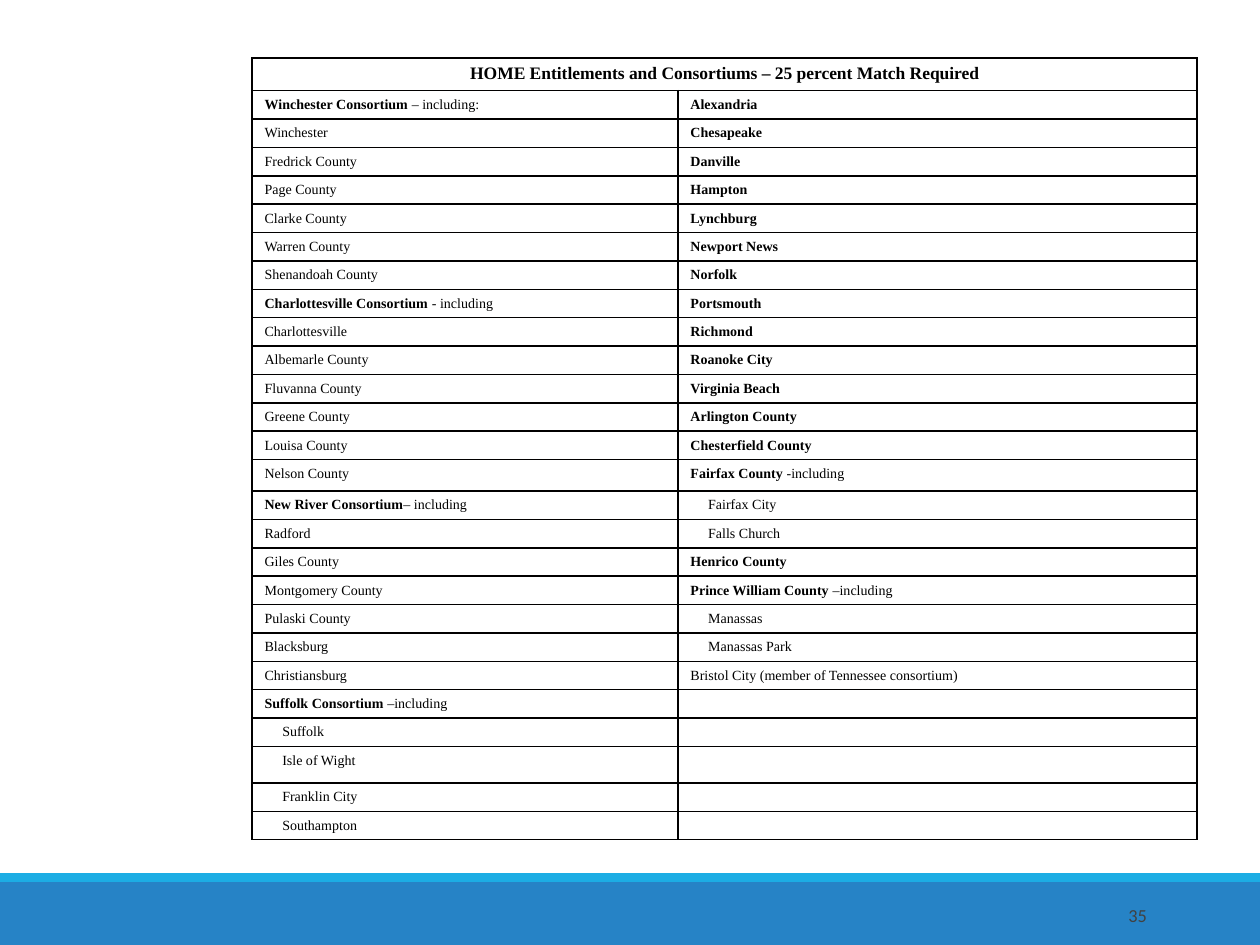
from itertools import zip_longest

from lxml.etree import SubElement
from pptx import Presentation
from pptx.dml.color import RGBColor
from pptx.enum.shapes import MSO_SHAPE as Shape
from pptx.enum.text import MSO_ANCHOR as Anchor, PP_ALIGN as Align
from pptx.oxml.ns import qn
from pptx.util import Inches, Pt

COLORS = {
    "band": "2683C6",
    "stripe": "1CADE4",
    "number": "414141",
    "text": "000000",
    "border": "010000",
    "cell": "FFFFFF",
}
TITLE = "HOME Entitlements and Consortiums – 25 percent Match Required"
CONSORTIUMS = [
    "*Winchester Consortium* – including:", "Winchester", "Fredrick County",
    "Page County", "Clarke County", "Warren County", "Shenandoah County",
    "*Charlottesville Consortium* - including", "Charlottesville",
    "Albemarle County", "Fluvanna County", "Greene County", "Louisa County",
    "Nelson County", "*New River Consortium*– including", "Radford",
    "Giles County", "Montgomery County", "Pulaski County", "Blacksburg",
    "Christiansburg", "*Suffolk Consortium* –including", ">Suffolk",
    ">Isle of Wight", ">Franklin City", ">Southampton",
]
ENTITLEMENTS = [
    "*Alexandria", "*Chesapeake", "*Danville", "*Hampton", "*Lynchburg",
    "*Newport News", "*Norfolk", "*Portsmouth", "*Richmond", "*Roanoke City",
    "*Virginia Beach", "*Arlington County", "*Chesterfield County",
    "*Fairfax County *-including", ">Fairfax City", ">Falls Church",
    "*Henrico County", "*Prince William County *–including", ">Manassas",
    ">Manassas Park", "Bristol City (member of Tennessee consortium)",
]
TABLE_HEIGHT = 6.21
TALL_ROWS = {0: 0.26, 14: 0.25, 24: 0.29}


def write(frame, text, size=8, font="Times New Roman", color="text", align=Align.LEFT):
    paragraph = frame.paragraphs[0]
    paragraph.alignment = align
    if text.startswith(">"):
        paragraph._p.get_or_add_pPr().set("marL", str(Inches(0.14)))
    for index, part in enumerate(text.lstrip(">").split("*")):
        if part:
            run = paragraph.add_run()
            run.text = part
            run.font.size = Pt(size)
            run.font.name = font
            run.font.bold = index % 2 == 1
            run.font.color.rgb = RGBColor.from_string(COLORS[color])
    if not text:
        SubElement(paragraph._p, qn("a:endParaRPr"), sz=str(size * 100))


def add_borders(cell):
    properties = cell._tc.get_or_add_tcPr()
    for index, side in enumerate(("lnL", "lnR", "lnT", "lnB")):
        line = SubElement(properties, qn(f"a:{side}"), w=str(Pt(1)))
        fill = SubElement(line, qn("a:solidFill"))
        SubElement(fill, qn("a:srgbClr"), val=COLORS["border"])
        properties.insert(index, line)


prs = Presentation()
prs.slide_width, prs.slide_height = Inches(10), Inches(7.5)
slide = prs.slides.add_slide(prs.slide_layouts[6])

for top, height, color in ((7, 0.5, "band"), (6.93, 0.07, "stripe")):
    footer = slide.shapes.add_shape(
        Shape.RECTANGLE, 0, Inches(top), Inches(10), Inches(height))
    footer.shadow.inherit = False
    footer.fill.solid()
    footer.fill.fore_color.rgb = RGBColor.from_string(COLORS[color])
    footer.line.fill.background()

page_number = slide.shapes.add_textbox(
    Inches(8.12), Inches(7.06), Inches(1.08), Inches(0.4)).text_frame
page_number.word_wrap = True
page_number.vertical_anchor = Anchor.MIDDLE
write(page_number, "35", size=10.5, font="Calibri", color="number", align=Align.RIGHT)

localities = list(zip_longest(CONSORTIUMS, ENTITLEMENTS, fillvalue=""))
row_count = len(localities) + 1
row_height = (TABLE_HEIGHT - sum(TALL_ROWS.values())) / (row_count - len(TALL_ROWS))
match_table = slide.shapes.add_table(
    row_count, 2, Inches(2), Inches(0.46), Inches(7.5), Inches(TABLE_HEIGHT)).table
match_table.first_row = False
match_table.horz_banding = False
for column, width in zip(match_table.columns, (3.38, 4.12)):
    column.width = Inches(width)
for index, row in enumerate(match_table.rows):
    row.height = Inches(TALL_ROWS.get(index, row_height))
    for cell in row.cells:
        cell.margin_bottom = Inches(0.03)
        cell.fill.solid()
        cell.fill.fore_color.rgb = RGBColor.from_string(COLORS["cell"])
        add_borders(cell)

match_table.cell(0, 0).merge(match_table.cell(0, 1))
write(match_table.cell(0, 0).text_frame, "*" + TITLE, size=10, align=Align.CENTER)
for index, pair in enumerate(localities, start=1):
    for column, locality in enumerate(pair):
        write(match_table.cell(index, column).text_frame, locality)

prs.save("out.pptx")
